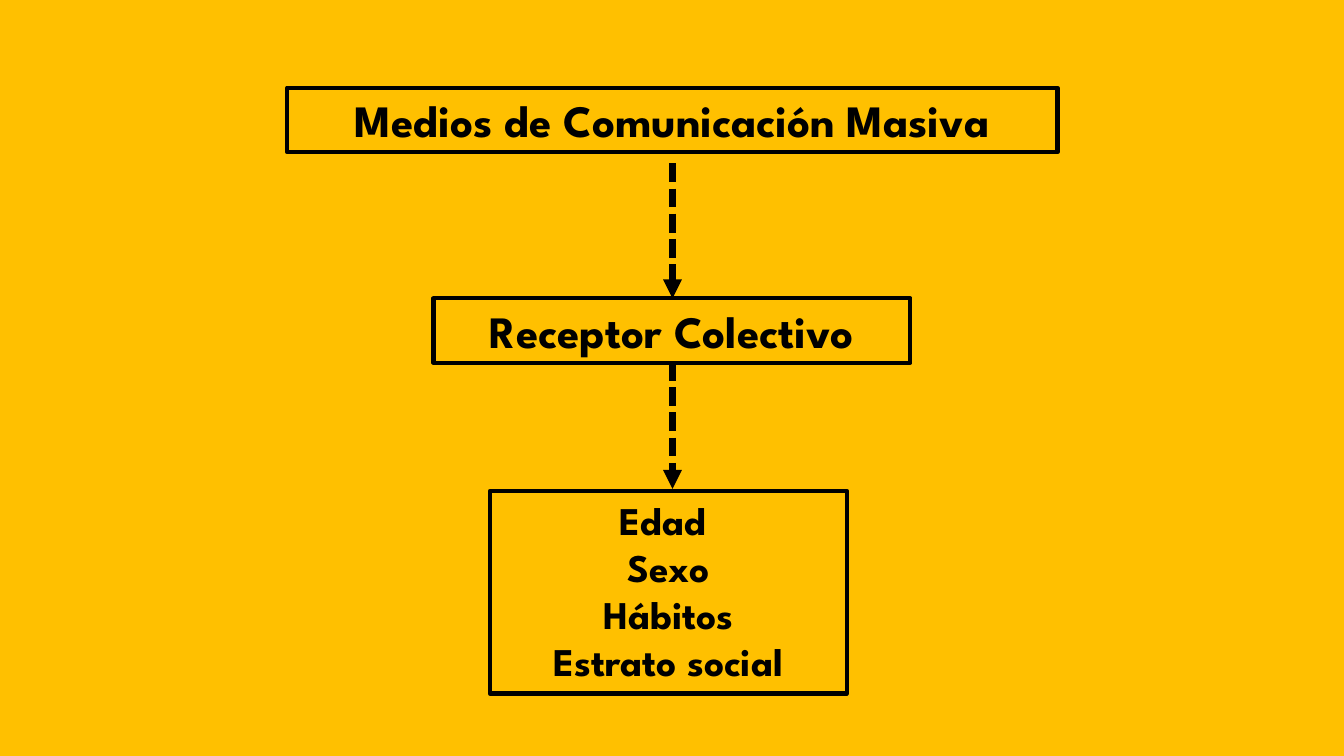
from dataclasses import dataclass

from lxml import etree
from pptx import Presentation
from pptx.dml.color import RGBColor
from pptx.enum.dml import MSO_LINE
from pptx.enum.shapes import MSO_CONNECTOR
from pptx.enum.text import MSO_AUTO_SIZE, PP_ALIGN
from pptx.oxml.ns import qn
from pptx.slide import Slide
from pptx.util import Inches, Pt

STRAIGHT = MSO_CONNECTOR.STRAIGHT
SQUARE_DOT = MSO_LINE.SQUARE_DOT
FIT_TEXT = MSO_AUTO_SIZE.SHAPE_TO_FIT_TEXT
CENTER = PP_ALIGN.CENTER

FONT = "League Spartan"
YELLOW = "FFC000"
BLACK = "000000"
ARROW_X = 6.67


@dataclass
class Box:
    left: float
    top: float
    width: float
    height: float
    size: int
    lines: list[str]


@dataclass
class Arrow:
    top: float
    bottom: float


BOXES = [
    Box(2.85, 0.87, 7.64, 0.64, 32, ["Medios de Comunicación Masiva"]),
    Box(4.3, 2.96, 4.73, 0.64, 32, ["Receptor Colectivo"]),
    Box(4.86, 4.87, 3.54, 2.01, 28, ["Edad ", "Sexo", "Hábitos", "Estrato social"]),
]
ARROWS = [Arrow(1.62, 2.96), Arrow(3.59, 4.85)]


def rgb(color: str) -> RGBColor:
    return RGBColor.from_string(color)


def add_box(s: Slide, box: Box) -> None:
    sp = s.shapes.add_textbox(
        Inches(box.left), Inches(box.top), Inches(box.width), Inches(box.height)
    )
    sp.line.color.rgb = rgb(BLACK)
    sp.line.width = Pt(3)
    tf = sp.text_frame
    tf.word_wrap = True
    tf.auto_size = FIT_TEXT
    tf.text = "\n".join(box.lines)
    for p in tf.paragraphs:
        p.alignment = CENTER
        p.font.name = FONT
        p.font.size = Pt(box.size)
        p.font.bold = True
        p.font.color.rgb = rgb(BLACK)


def add_arrow(s: Slide, arrow: Arrow) -> None:
    """Draw a dotted arrow pointing down, without a shadow."""
    x = Inches(ARROW_X)
    cn = s.shapes.add_connector(STRAIGHT, x, Inches(arrow.top), x, Inches(arrow.bottom))
    cn.line.color.rgb = rgb(BLACK)
    cn.line.width = Pt(4.5)
    cn.line.dash_style = SQUARE_DOT
    sp_pr = cn._element.spPr
    etree.SubElement(sp_pr.find(qn("a:ln")), qn("a:tailEnd"), type="triangle")
    etree.SubElement(sp_pr, qn("a:effectLst"))


def main() -> None:
    prs = Presentation()
    prs.slide_width = Inches(13.33)
    prs.slide_height = Inches(7.5)
    s = prs.slides.add_slide(prs.slide_layouts[6])
    s.background.fill.solid()
    s.background.fill.fore_color.rgb = rgb(YELLOW)
    for box in BOXES:
        add_box(s, box)
    for arrow in ARROWS:
        add_arrow(s, arrow)
    prs.save("out.pptx")


if __name__ == "__main__":
    main()
